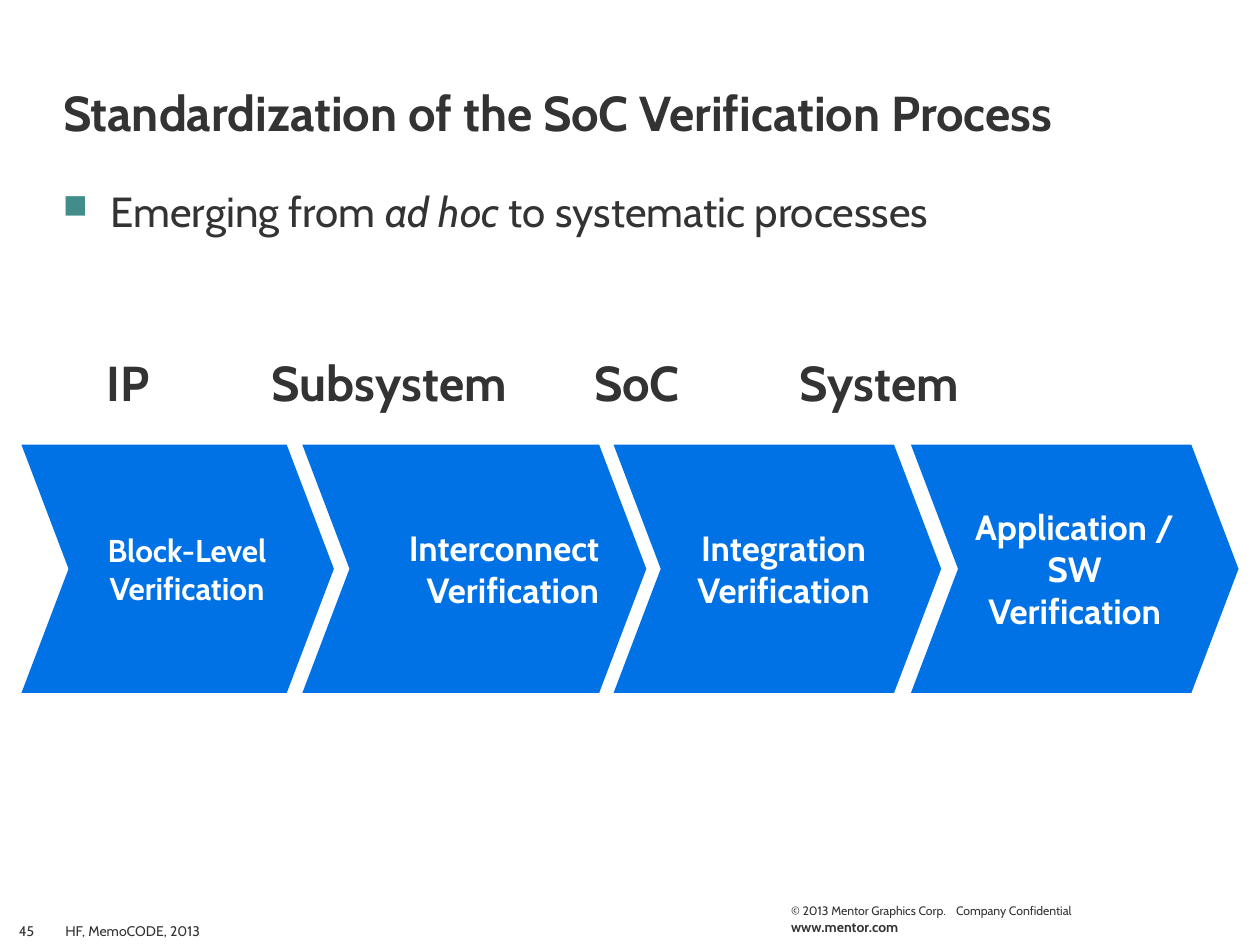
from pptx import Presentation
from pptx import util as u
from pptx.dml.color import RGBColor
from pptx.enum import shapes, text
from pptx.oxml.ns import qn
from lxml import etree

DARK = RGBColor(0x33, 0x33, 0x33)
WHITE = RGBColor(0xFF, 0xFF, 0xFF)
BLUE = RGBColor(0x00, 0x72, 0xE5)
TEAL = "428C8A"
FONT = "Cabin"
LEFT, CENTER, RIGHT = text.PP_ALIGN.LEFT, text.PP_ALIGN.CENTER, text.PP_ALIGN.RIGHT
TOP, MIDDLE, BOTTOM = text.MSO_ANCHOR.TOP, text.MSO_ANCHOR.MIDDLE, text.MSO_ANCHOR.BOTTOM


def add_run(p, words, size, color=DARK, bold=False, italic=False):
    r = p.add_run()
    r.text = words
    f = r.font
    f.name, f.size, f.bold, f.italic = FONT, u.Pt(size), bold, italic
    f.color.rgb = color


def add_box(left, top, width, height, anchor=TOP, inset=0.1, tabs=()):
    tf = s.shapes.add_textbox(u.Inches(left), u.Inches(top),
                              u.Inches(width), u.Inches(height)).text_frame
    tf.word_wrap = True
    tf.vertical_anchor = anchor
    tf.margin_left = tf.margin_right = u.Inches(inset)
    p = tf.paragraphs[0]
    if tabs:
        tab_list = etree.SubElement(p._p.get_or_add_pPr(), qn("a:tabLst"))
        for pos in tabs:
            etree.SubElement(tab_list, qn("a:tab"), pos=str(u.Inches(pos)), algn="l")
    return p


prs = Presentation()
prs.slide_width, prs.slide_height = u.Inches(10), u.Inches(7.5)
s = prs.slides.add_slide(prs.slide_layouts[6])

# Title
p = add_box(0, 0, 10.42, 1.17, BOTTOM, 0.5)
add_run(p, "Standardization of the SoC Verification Process", 28, bold=True)

# Bulleted statement
p = add_box(0, 1.42, 10, 5.55, TOP, 0.5)
pPr = p._p.get_or_add_pPr()
pPr.set("marL", str(u.Inches(0.38)))
pPr.set("indent", str(u.Inches(-0.38)))
color = etree.SubElement(pPr, qn("a:buClr"))
etree.SubElement(color, qn("a:srgbClr"), val=TEAL)
etree.SubElement(pPr, qn("a:buSzPct"), val="80000")
etree.SubElement(pPr, qn("a:buChar"), char="■")
add_run(p, "Emerging from ", 24)
add_run(p, "ad hoc ", 24, italic=True)
add_run(p, "to systematic processes", 24)

# Process chevrons: left, width, left inset, right inset, size, alignment, lines
steps = [
    (0.17, 2.48, 0.15, 0, 18, CENTER, "Block-Level"),
    (2.4, 2.73, 0.13, 0, 20, RIGHT, "Interconnect"),
    (4.87, 2.6, 0.1, 0, 20, CENTER, "Integration"),
    (7.23, 2.6, 0.1, 0.1, 20, CENTER, "Application / SW"),
]
for left, width, inset_l, inset_r, size, align, stage in steps:
    sp = s.shapes.add_shape(shapes.MSO_SHAPE.CHEVRON, u.Inches(left), u.Inches(3.53),
                            u.Inches(width), u.Inches(1.97))
    sp.adjustments[0] = 0.19
    sp.shadow.inherit = False
    sp.fill.solid()
    sp.fill.fore_color.rgb = BLUE
    sp.line.fill.background()
    tf = sp.text_frame
    tf.word_wrap = True
    tf.vertical_anchor = MIDDLE
    tf.margin_left, tf.margin_right = u.Inches(inset_l), u.Inches(inset_r)
    for i, line in enumerate((stage, "Verification")):
        p = tf.add_paragraph() if i else tf.paragraphs[0]
        p.alignment = align
        add_run(p, line, size, WHITE, bold=True)

# Stage headings above the chevrons
p = add_box(0.75, 2.75, 8.47, 0.57, tabs=(1.31, 3.87, 5.5))
add_run(p, "IP\tSubsystem\tSoC\tSystem", 28, bold=True)

# Footer
p = add_box(0, 7.25, 0.42, 0.25, BOTTOM)
p.alignment = CENTER
add_run(p, "45", 8)
p = add_box(0.42, 7.25, 5.7, 0.25, BOTTOM)
add_run(p, "HF, MemoCODE, 2013", 8)
p = add_box(6.18, 7.12, 2.65, 0.22, tabs=(1.31,))
add_run(p, "© 2013 Mentor Graphics Corp.\tCompany Confidential", 7)
p = add_box(6.18, 7.24, 1.58, 0.23)
add_run(p, "www.mentor.com", 8, bold=True)

prs.save("out.pptx")
